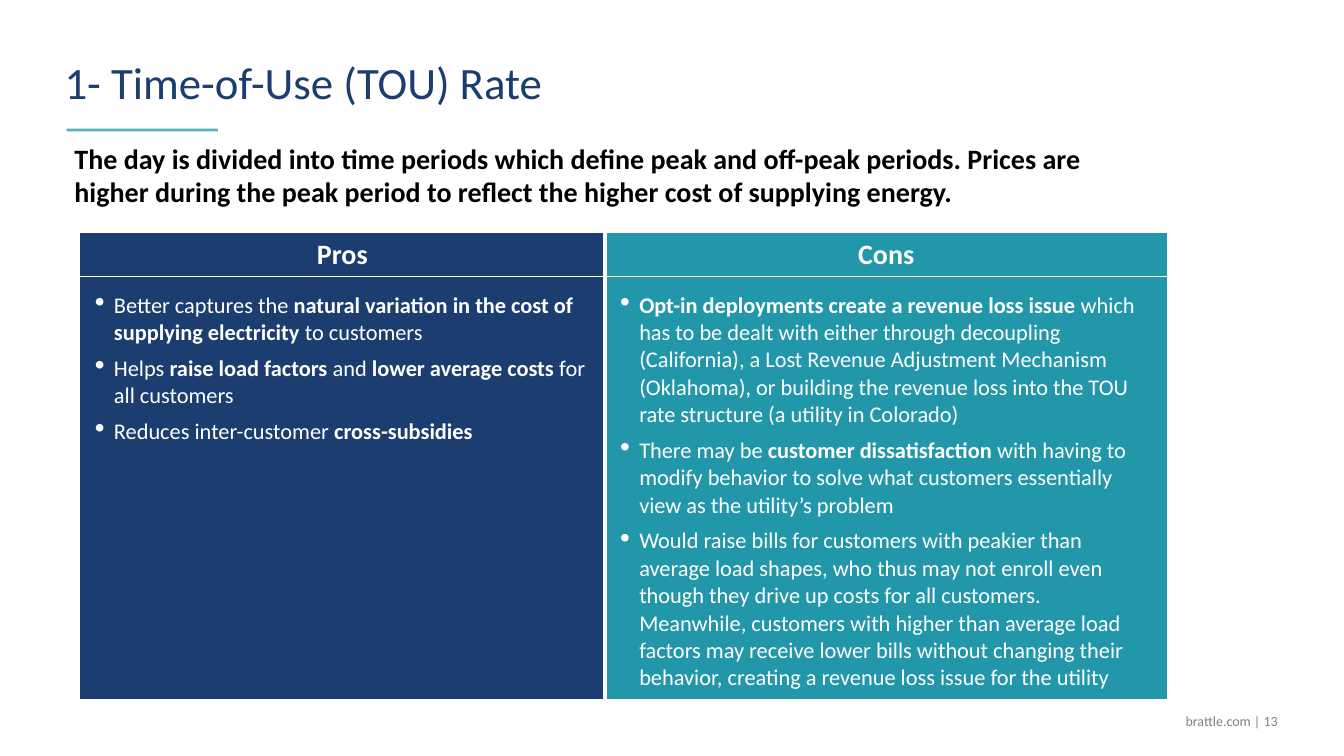
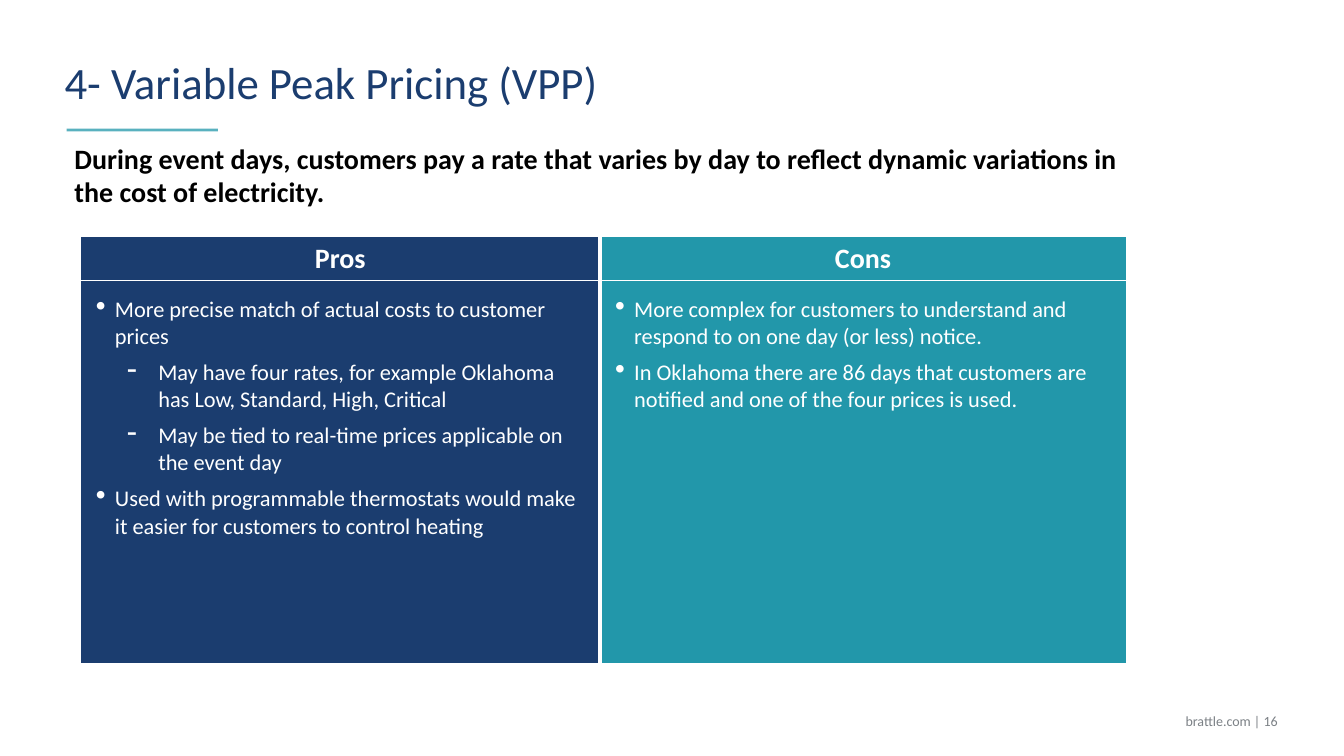
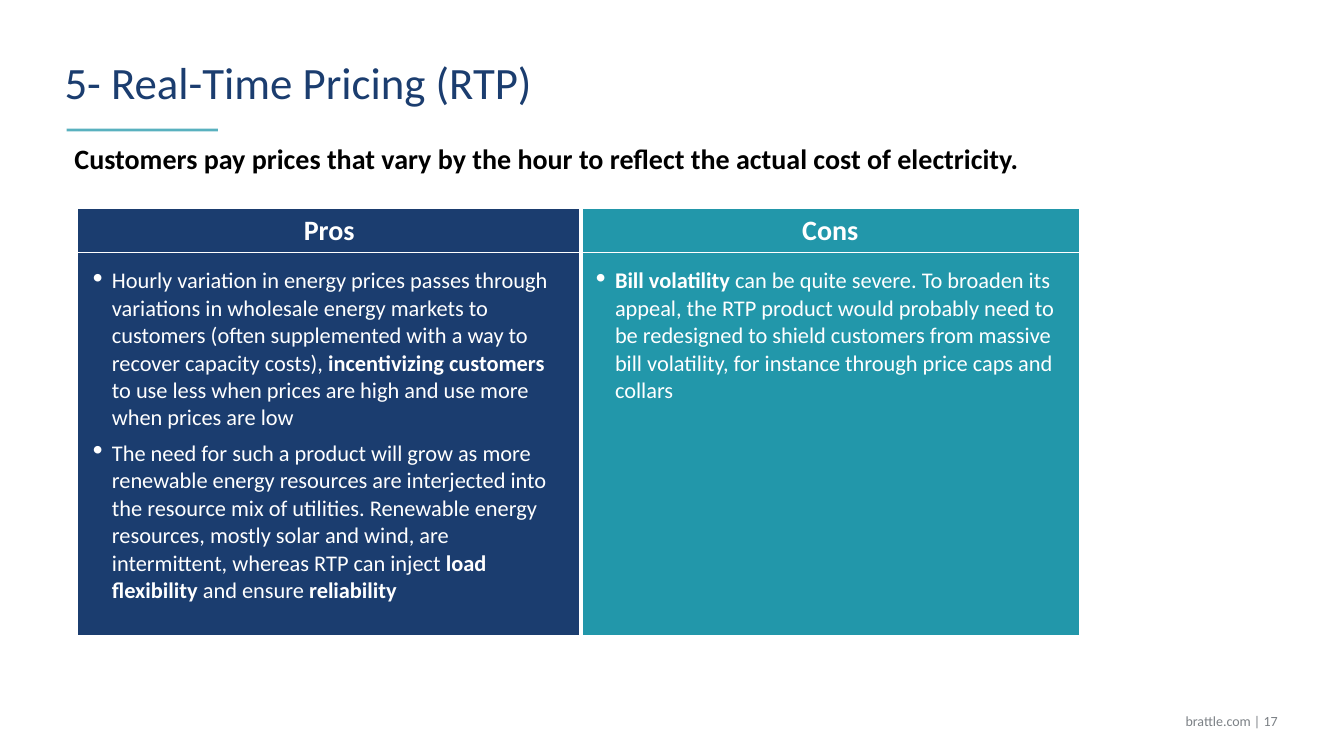
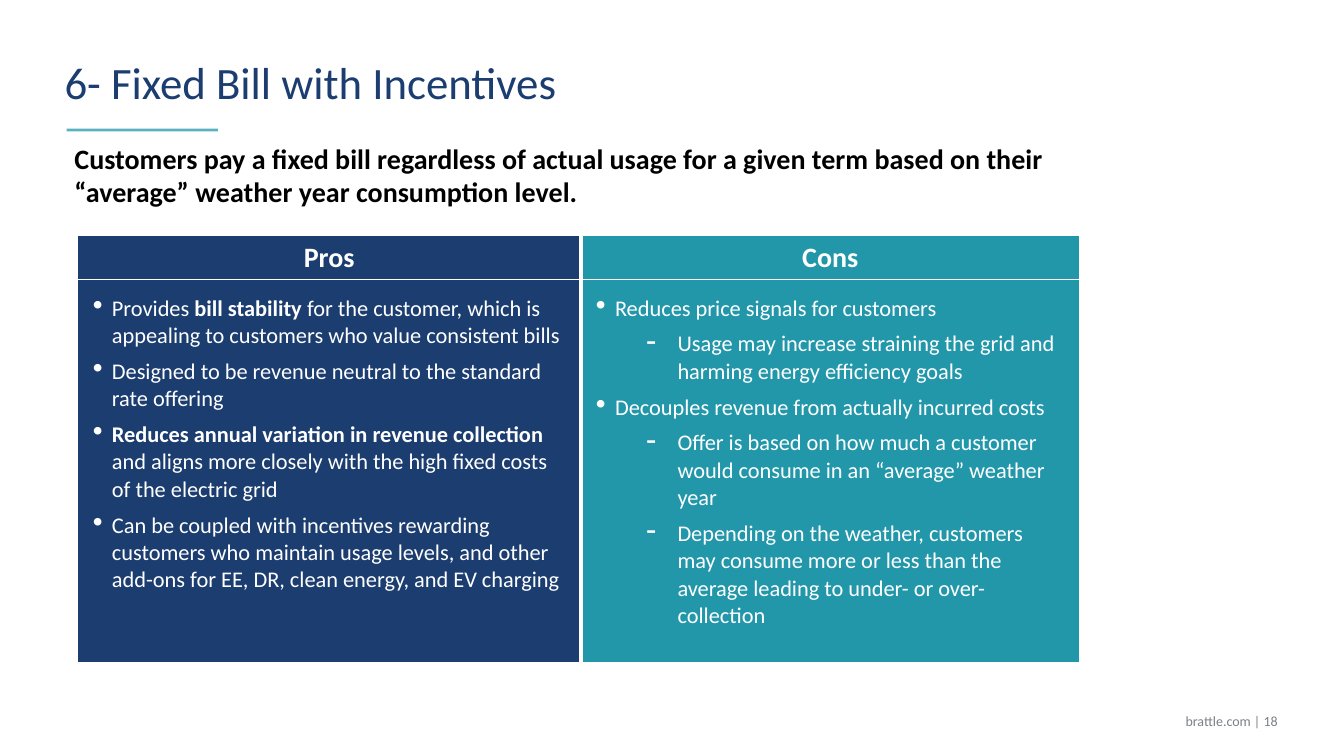
"""Builds four pros-and-cons slides about electricity rate designs."""
from dataclasses import dataclass
from typing import NamedTuple

import lxml.etree
import pptx
import pptx.dml.color
import pptx.enum.shapes
import pptx.enum.text
import pptx.oxml.ns
import pptx.slide
import pptx.table
import pptx.text.text
import pptx.util

ALIGN = pptx.enum.text.PP_ALIGN
ANCHOR = pptx.enum.text.MSO_ANCHOR
qn = pptx.oxml.ns.qn


@dataclass(frozen=True)
class Theme:
    """Colours and type sizes shared by all slides."""
    font: str = "Calibri"
    navy: str = "1B3D6F"
    teal: str = "2297AA"
    black: str = "000000"
    white: str = "FFFFFF"
    grey: str = "7C8186"
    title_pt: int = 32
    lead_pt: int = 20
    body_pt: int = 16
    footer_pt: int = 10


class Box(NamedTuple):
    """Left, top, width and height in px."""
    x: int
    y: int
    w: int
    h: int


class Item(NamedTuple):
    """One bullet, with bold parts between double asterisks."""
    text: str
    level: int = 0


@dataclass(frozen=True)
class RateSlide:
    """The content of one slide and the measures of its table."""
    number: int
    title: str
    lead: str
    pros: tuple[Item, ...]
    cons: tuple[Item, ...]
    left: int
    top: int
    columns: tuple[int, int]
    lead_width: int = 1054
    body_height: int = 380
    sub_indent: int = 62


THEME = Theme()
SLIDE_W, SLIDE_H = 1333, 750
TITLE_BOX = Box(56, 0, 1221, 117)
FOOTER_BOX = Box(1118, 695, 159, 40)
RULE_LEFT, RULE_RIGHT, RULE_Y = 66, 216, 129
LEAD_LEFT, LEAD_TOP, LEAD_H = 64, 135, 77
HEADER_H = 43
CELL_INSET = 15
BULLET_INDENT, DASH_HANG = 19, 31
THIN, THICK = 1, 3

SLIDES = (
    RateSlide(
        13, "1- Time-of-Use (TOU) Rate",
        "The day is divided into time periods which define peak and off-peak periods. "
        "Prices are higher during the peak period to reflect the higher cost of supplying energy.",
        (
            Item("Better captures the **natural variation in the cost of supplying electricity **to customers"),
            Item("Helps **raise load factors **and** lower average costs** for all customers"),
            Item("Reduces inter-customer **cross-subsidies**"),
        ),
        (
            Item("**Opt-in deployments create a revenue loss issue **which has to be dealt with either through "
                 "decoupling (California), a Lost Revenue Adjustment Mechanism (Oklahoma), or building the "
                 "revenue loss into the TOU rate structure (a utility in Colorado)"),
            Item("There may be **customer dissatisfaction **with having to modify behavior to solve what "
                 "customers essentially view as the utility’s problem"),
            Item("Would raise bills for customers with peakier than average load shapes, who thus may not "
                 "enroll even though they drive up costs for all customers. Meanwhile, customers with higher "
                 "than average load factors may receive lower bills without changing their behavior, creating "
                 "a revenue loss issue for the utility"),
        ),
        left=79, top=231, columns=(521, 558), body_height=420,
    ),
    RateSlide(
        16, "4- Variable Peak Pricing (VPP)",
        "During event days, customers pay a rate that varies by day to reflect dynamic variations in "
        "the cost of electricity.",
        (
            Item("More precise match of actual costs to customer prices"),
            Item("May have four rates, for example Oklahoma has Low, Standard, High, Critical", 1),
            Item("May be tied to real-time prices applicable on the event day", 1),
            Item("Used with programmable thermostats would make it easier for customers to control heating"),
        ),
        (
            Item("More complex for customers to understand and respond to on one day (or less) notice."),
            Item("In Oklahoma there are 86 days that customers are notified and one of the four prices is used."),
        ),
        left=80, top=235, columns=(515, 522),
    ),
    RateSlide(
        17, "5- Real-Time Pricing (RTP)",
        "Customers pay prices that vary by the hour to reflect the actual cost of electricity.",
        (
            Item("Hourly variation in energy prices passes through variations in wholesale energy markets to "
                 "customers (often supplemented with a way to recover capacity costs), **incentivizing "
                 "customers **to use less when prices are high and use more when prices are low"),
            Item("The need for such a product will grow as more renewable energy resources are interjected "
                 "into the resource mix of utilities. Renewable energy resources, mostly solar and wind, are "
                 "intermittent, whereas RTP can inject **load flexibility **and ensure **reliability**"),
        ),
        (
            Item("**Bill volatility **can be quite severe. To broaden its appeal, the RTP product would "
                 "probably need to be redesigned to shield customers from massive bill volatility, for "
                 "instance through price caps and collars"),
        ),
        left=77, top=207, columns=(499, 495),
    ),
    RateSlide(
        18, "6- Fixed Bill with Incentives",
        "Customers pay a fixed bill regardless of actual usage for a given term based on their "
        "“average” weather year consumption level.",
        (
            Item("Provides **bill stability **for the customer, which is appealing to customers who value "
                 "consistent bills"),
            Item("Designed to be revenue neutral to the standard rate offering"),
            Item("**Reduces annual variation in revenue collection **and aligns more closely with the high "
                 "fixed costs of the electric grid"),
            Item("Can be coupled with incentives rewarding customers who maintain usage levels, and other "
                 "add-ons for EE, DR, clean energy, and EV charging"),
        ),
        (
            Item("Reduces price signals for customers"),
            Item("Usage may increase straining the grid and harming energy efficiency goals", 1),
            Item("Decouples revenue from actually incurred costs"),
            Item("Offer is based on how much a customer would consume in an “average” weather year", 1),
            Item("Depending on the weather, customers may consume more or less than the average leading to "
                 "under- or over-collection", 1),
        ),
        left=77, top=234, columns=(499, 495), lead_width=1094, sub_indent=81,
    ),
)


def px(n: int) -> pptx.util.Emu:
    """Turn px into EMU at 100 px to the inch."""
    return pptx.util.Emu(n * 9144)


def rgb(color: str) -> pptx.dml.color.RGBColor:
    """Turn a hex string into a colour."""
    return pptx.dml.color.RGBColor.from_string(color)


def format_run(r: pptx.text.text._Run, size: int, color: str, bold: bool = False) -> None:
    """Set the font of a run."""
    r.font.name = THEME.font
    r.font.size = pptx.util.Pt(size)
    r.font.color.rgb = rgb(color)
    r.font.bold = bold


def add_text(s: pptx.slide.Slide, box: Box, text: str, size: int, color: str,
             bold: bool = False) -> pptx.text.text.TextFrame:
    """Add a wrapping one-paragraph text box and return its frame."""
    tf = s.shapes.add_textbox(*map(px, box)).text_frame
    tf.word_wrap = True
    tf.text = text
    format_run(tf.paragraphs[0].runs[0], size, color, bold)
    return tf


def add_title(s: pptx.slide.Slide, text: str) -> None:
    """Add the slide title and the short rule below it."""
    tf = add_text(s, TITLE_BOX, text, THEME.title_pt, THEME.navy)
    tf.vertical_anchor = ANCHOR.BOTTOM
    tf.margin_left, tf.margin_bottom = px(8), px(10)
    tf.paragraphs[0].line_spacing = 0.8
    rule = s.shapes.add_connector(
        pptx.enum.shapes.MSO_CONNECTOR.STRAIGHT,
        px(RULE_LEFT), px(RULE_Y), px(RULE_RIGHT), px(RULE_Y))
    rule.line.color.rgb = rgb(THEME.teal)
    rule.line.width = pptx.util.Pt(2)
    sp_pr = rule._element.spPr
    lxml.etree.SubElement(next(sp_pr.iter(qn("a:srgbClr"))), qn("a:alpha"), val="75000")
    lxml.etree.SubElement(sp_pr, qn("a:effectLst"))


def add_footer(s: pptx.slide.Slide, number: int) -> None:
    """Add the site name and page number."""
    tf = add_text(s, FOOTER_BOX, f"brattle.com | {number}", THEME.footer_pt, THEME.grey)
    tf.vertical_anchor = ANCHOR.MIDDLE
    tf.paragraphs[0].alignment = ALIGN.RIGHT


def style_cell(cell: pptx.table._Cell, color: str, borders: dict[str, int]) -> None:
    """Give a cell white borders of the given widths and a fill."""
    tc_pr = cell._tc.get_or_add_tcPr()
    for side, width in borders.items():
        ln = lxml.etree.SubElement(tc_pr, qn(f"a:ln{side}"), w=str(pptx.util.Pt(width)))
        fill = lxml.etree.SubElement(ln, qn("a:solidFill"))
        lxml.etree.SubElement(fill, qn("a:srgbClr"), val=THEME.white)
    cell.fill.solid()
    cell.fill.fore_color.rgb = rgb(color)


def set_bullet(p: pptx.text.text._Paragraph, char: str, indent: int, hang: int) -> None:
    """Give a paragraph a large white bullet and a hanging indent."""
    p_pr = p._p.get_or_add_pPr()
    p_pr.set("marL", str(px(indent)))
    p_pr.set("indent", str(-px(hang)))
    bu_clr = lxml.etree.SubElement(p_pr, qn("a:buClr"))
    lxml.etree.SubElement(bu_clr, qn("a:srgbClr"), val=THEME.white)
    lxml.etree.SubElement(p_pr, qn("a:buSzPct"), val="130000")
    lxml.etree.SubElement(p_pr, qn("a:buChar"), char=char)


def fill_body(cell: pptx.table._Cell, items: tuple[Item, ...], sub_indent: int) -> None:
    """Write the bullets of one table column."""
    cell.margin_left = cell.margin_right = px(CELL_INSET)
    cell.margin_top = cell.margin_bottom = px(CELL_INSET)
    tf = cell.text_frame
    for i, item in enumerate(items):
        p = tf.add_paragraph() if i else tf.paragraphs[0]
        p.level = item.level
        if item.level:
            set_bullet(p, "-", sub_indent, DASH_HANG)
        else:
            set_bullet(p, "•", BULLET_INDENT, BULLET_INDENT)
        if i:
            p.space_before = pptx.util.Pt(6)
        for part, text in enumerate(item.text.split("**")):
            if text:
                r = p.add_run()
                r.text = text
                format_run(r, THEME.body_pt, THEME.white, bold=part % 2 == 1)


def add_pros_cons(s: pptx.slide.Slide, rate: RateSlide) -> None:
    """Add the two-column table of pros and cons."""
    box = Box(rate.left, rate.top, sum(rate.columns), HEADER_H + rate.body_height)
    table = s.shapes.add_table(2, 2, *map(px, box)).table
    table.horz_banding = False
    table.rows[0].height, table.rows[1].height = px(HEADER_H), px(rate.body_height)
    columns = (("Pros", rate.pros, THEME.navy, THIN, THICK),
               ("Cons", rate.cons, THEME.teal, THICK, THIN))
    for i, (heading, items, color, left, right) in enumerate(columns):
        table.columns[i].width = px(rate.columns[i])
        header, body = table.cell(0, i), table.cell(1, i)
        for cell in (header, body):
            style_cell(cell, color, {"L": left, "R": right, "T": THIN, "B": THIN})
        header.text_frame.text = heading
        p = header.text_frame.paragraphs[0]
        p.alignment = ALIGN.CENTER
        format_run(p.runs[0], THEME.lead_pt, THEME.white, bold=True)
        fill_body(body, items, rate.sub_indent)


def main() -> None:
    """Build and save the presentation."""
    prs = pptx.Presentation()
    prs.slide_width, prs.slide_height = px(SLIDE_W), px(SLIDE_H)
    for rate in SLIDES:
        s = prs.slides.add_slide(prs.slide_layouts[6])
        add_title(s, rate.title)
        add_footer(s, rate.number)
        add_text(s, Box(LEAD_LEFT, LEAD_TOP, rate.lead_width, LEAD_H),
                 rate.lead, THEME.lead_pt, THEME.black, bold=True)
        add_pros_cons(s, rate)
    prs.save("out.pptx")


if __name__ == "__main__":
    main()
